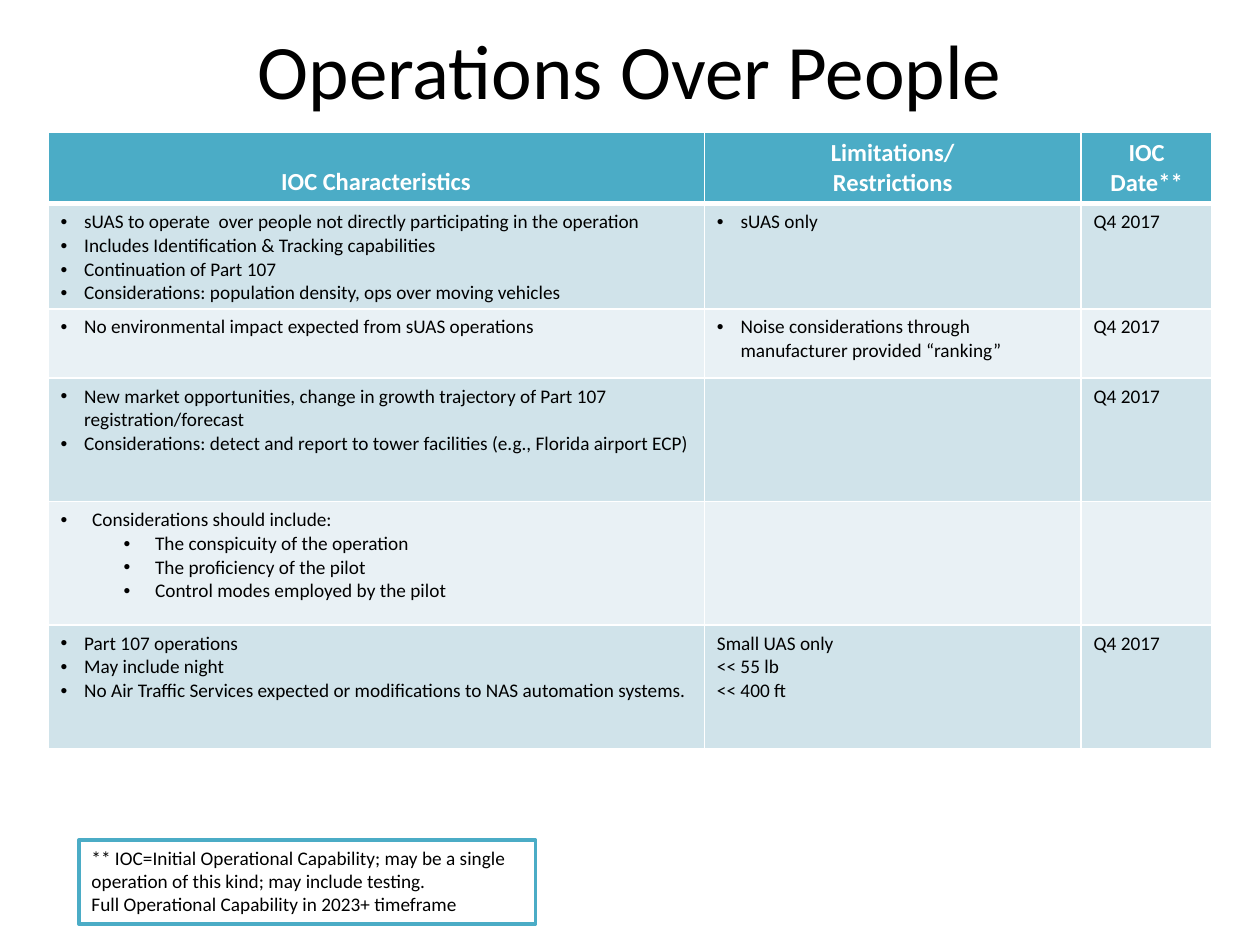
from dataclasses import dataclass
from typing import Any

from lxml.etree import SubElement as Sub
from pptx import Presentation
from pptx.dml.color import RGBColor as Color
from pptx.enum.shapes import MSO_SHAPE as Shape
from pptx.enum.text import MSO_ANCHOR as Anchor, PP_ALIGN as Align
from pptx.oxml.ns import qn
from pptx.util import Pt

TEAL, BLACK, WHITE = "4BACC6", "000000", "FFFFFF"
BANDS = "D0E3EA", "E9F1F5"
WIDTHS = 375.1, 215.3, 74.9
HEIGHTS = 36, 57.6, 39.6, 70.6, 70.6, 70.6


@dataclass(frozen=True)
class Line:
    text: str
    left: float = 0
    hang: float = 0
    level: int = 0


@dataclass(frozen=True)
class Style:
    size: float
    color: str = BLACK
    bold: bool = False
    align: Any = Align.LEFT


TITLE = Style(44, align=Align.CENTER)
HEAD = Style(14, WHITE, True, Align.CENTER)
BODY = Style(11)


def dots(*texts: str) -> list[Line]:
    return [Line(text, 13.5, 13.5) for text in texts]


def plain(*texts: str) -> list[Line]:
    return [Line(text) for text in texts]


DATE = plain("Q4 2017")
ROWS = [
    [plain("IOC Characteristics"), plain("Limitations/", "Restrictions"), plain("IOC Date**")],
    [
        dots(
            "sUAS to operate  over people not directly participating in the operation",
            "Includes Identification & Tracking capabilities",
            "Continuation of Part 107",
            "Considerations: population density, ops over moving vehicles",
        ),
        dots("sUAS only"),
        DATE,
    ],
    [
        dots("No environmental impact expected from sUAS operations"),
        dots("Noise considerations through manufacturer provided “ranking”"),
        DATE,
    ],
    [
        dots(
            "New market opportunities, change in growth trajectory of Part 107 registration/forecast",
            "Considerations: detect and report to tower facilities (e.g., Florida airport ECP)",
        ),
        [],
        DATE,
    ],
    [
        [
            Line("Considerations should include:", 18, 18),
            Line("The conspicuity of the operation", 54, 18, 1),
            Line("The proficiency of the pilot", 54, 18, 1),
            Line("Control modes employed by the pilot", 54, 18, 1),
        ],
        [],
        [],
    ],
    [
        dots(
            "Part 107 operations",
            "May include night",
            "No Air Traffic Services expected or modifications to NAS automation systems.",
        ),
        plain("Small UAS only", "<< 55 lb", "<< 400 ft"),
        DATE,
    ],
]
NOTES = plain(
    "** IOC=Initial Operational Capability; may be a single operation of this kind; may include testing.",
    "Full Operational Capability in 2023+ timeframe",
)


def paint(target: Any, color: str) -> None:
    target.solid()
    target.fore_color.rgb = Color.from_string(color)


def write(frame: Any, lines: list[Line], style: Style) -> None:
    frame.word_wrap = True
    looks = {"name": "Calibri", "size": Pt(style.size), "bold": style.bold}
    for index, line in enumerate(lines):
        para = frame.paragraphs[0] if index == 0 else frame.add_paragraph()
        para.alignment, para.level = style.align, line.level
        run = para.add_run()
        run.text = line.text
        for name, value in looks.items():
            setattr(run.font, name, value)
        paint(run.font.fill, style.color)
        if line.hang:
            props = para._p.get_or_add_pPr()
            props.set("marL", str(Pt(line.left)))
            props.set("indent", str(-Pt(line.hang)))
            Sub(props, qn("a:buFont"), typeface="Arial")
            Sub(props, qn("a:buChar"), char="•")


def edge(cell: Any, side: str, width: float) -> None:
    rule = Sub(cell._tc.get_or_add_tcPr(), qn(f"a:ln{side}"), w=str(Pt(width)))
    Sub(Sub(rule, qn("a:solidFill")), qn("a:srgbClr"), val=WHITE)


def draw_grid(slide: Any) -> None:
    frame = slide.shapes.add_table(
        len(HEIGHTS), len(WIDTHS), Pt(27.4), Pt(75.6), Pt(sum(WIDTHS)), Pt(sum(HEIGHTS))
    )
    grid = frame.table
    for col, width in zip(grid.columns, WIDTHS):
        col.width = Pt(width)
    for index, (row, height, texts) in enumerate(zip(grid.rows, HEIGHTS, ROWS)):
        row.height = Pt(height)
        head = index == 0
        for cell, lines in zip(row.cells, texts):
            cell.vertical_anchor = Anchor.BOTTOM if head else Anchor.TOP
            for side in "LRTB":
                thick = (head and side == "B") or (index == 1 and side == "T")
                edge(cell, side, 3 if thick else 1)
            paint(cell.fill, TEAL if head else BANDS[(index - 1) % 2])
            write(cell.text_frame, lines, HEAD if head else BODY)


def draw_title(slide: Any) -> None:
    box = slide.shapes.add_textbox(Pt(36), Pt(-6), Pt(648), Pt(90))
    box.text_frame.vertical_anchor = Anchor.MIDDLE
    write(box.text_frame, plain("Operations Over People"), TITLE)


def draw_note(slide: Any) -> None:
    box = slide.shapes.add_shape(Shape.RECTANGLE, Pt(45.2), Pt(480), Pt(260.8), Pt(48.2))
    box.shadow.inherit = False
    paint(box.fill, WHITE)
    paint(box.line.fill, TEAL)
    box.line.width = Pt(2)
    box.text_frame.vertical_anchor = Anchor.TOP
    write(box.text_frame, NOTES, BODY)


def main() -> None:
    deck = Presentation()
    deck.slide_width, deck.slide_height = Pt(720), Pt(540)
    slide = deck.slides.add_slide(deck.slide_layouts[6])
    draw_title(slide)
    draw_grid(slide)
    draw_note(slide)
    deck.save("out.pptx")


if __name__ == "__main__":
    main()
